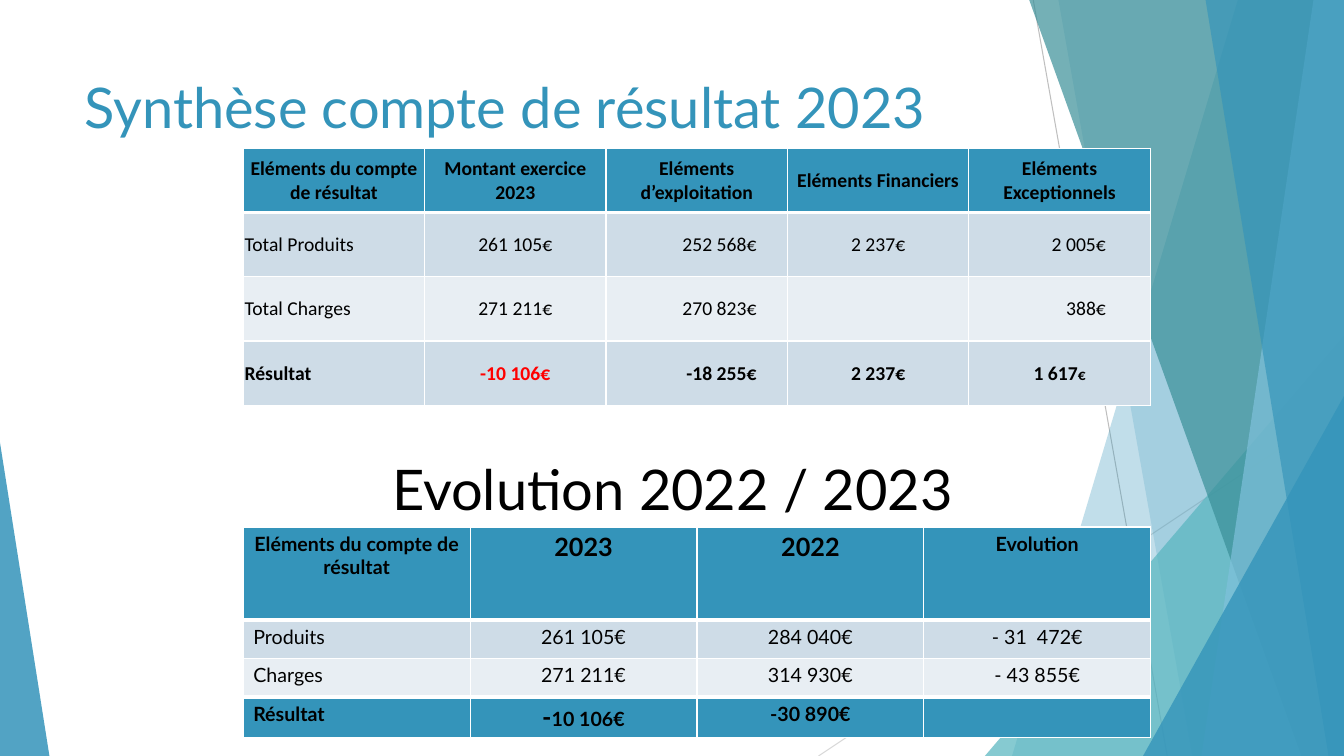
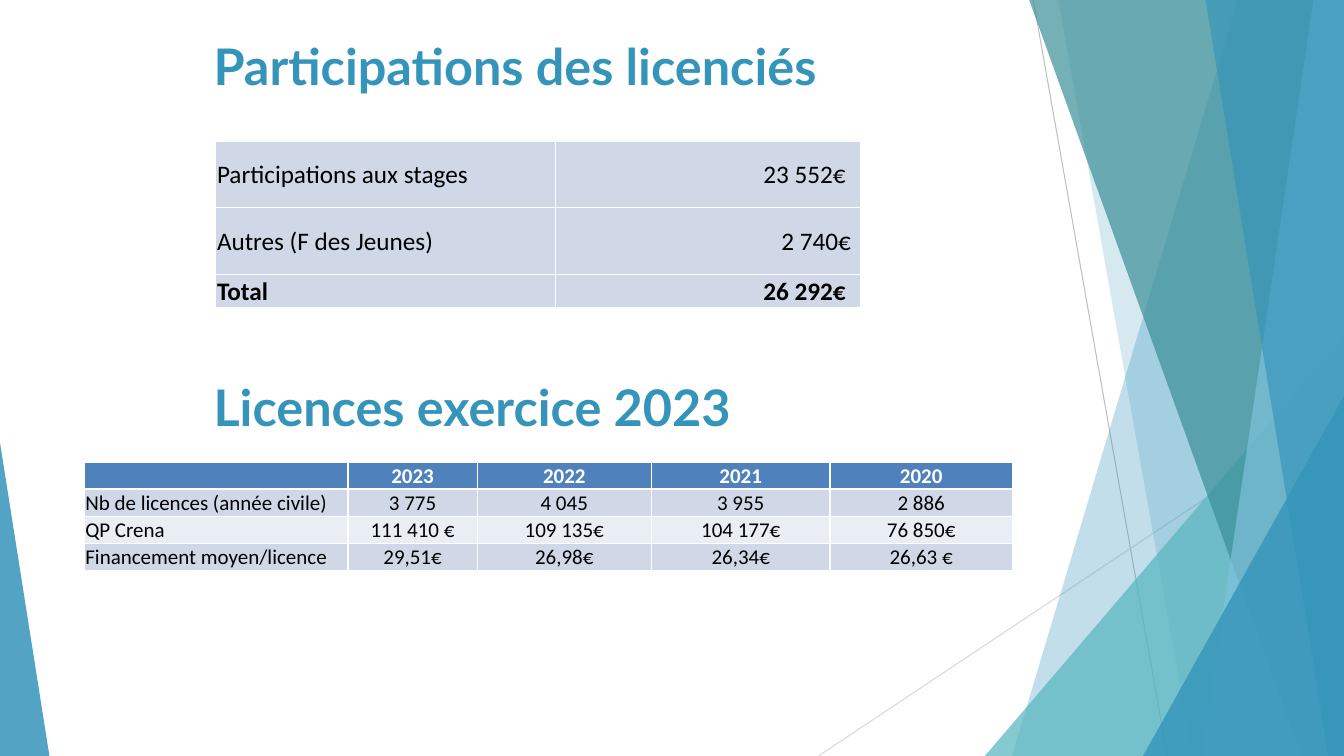
from lxml.etree import SubElement
from pptx import Presentation
from pptx.dml.color import RGBColor
from pptx.enum.shapes import MSO_CONNECTOR, MSO_SHAPE
from pptx.enum.text import MSO_ANCHOR, PP_ALIGN
from pptx.oxml.ns import qn
from pptx.util import Inches, Pt

COLORS = {
    "blue": "3494BA",
    "turquoise": "58B6C0",
    "teal": "3A8F98",
    "sky": "7FC1DB",
    "pale": "CEDCE7",
    "paler": "E8EEF3",
    "royal": "4F81BD",
    "lavender": "D0D8E8",
    "mist": "E9EDF4",
    "gray": "BFBFBF",
    "silver": "D9D9D9",
    "black": "000000",
    "white": "FFFFFF",
    "red": "FF0000",
}
COLORS_RGB = {name: RGBColor.from_string(value) for name, value in COLORS.items()}
LEFT, CENTER, RIGHT = PP_ALIGN.LEFT, PP_ALIGN.CENTER, PP_ALIGN.RIGHT
TIGHT = (0.1, 0.1, 0.1, 0)
ROOMY = (0.75, 0.67, 0.75, 0.67)

deck = Presentation()
deck.slide_width, deck.slide_height = Inches(13.33), Inches(7.5)
COLUMN, ROW = deck.slide_width / 100, deck.slide_height / 100


def add_heading(page, left, top, width, height, text, size, color="blue", bold=False, align=LEFT):
    box = page.shapes.add_textbox(
        round(left * COLUMN), round(top * ROW), round(width * COLUMN), round(height * ROW)
    )
    box.text_frame.word_wrap = True
    para = box.text_frame.paragraphs[0]
    para.text = text
    para.alignment = align
    para.font.name = "Lato"
    para.font.size = Pt(size)
    para.font.bold = bold
    para.font.color.rgb = COLORS_RGB[color]


def add_grid(page, left, top, columns, rows, font, size, padding, anchor, rules):
    width = sum(column[0] for column in columns)
    height = sum(row[0] for row in rows)
    table = page.shapes.add_table(
        len(rows), len(columns),
        round(left * COLUMN), round(top * ROW), round(width * COLUMN), round(height * ROW),
    ).table
    table.first_row = table.horz_banding = False
    for index, column in enumerate(columns):
        table.columns[index].width = round(column[0] * COLUMN)
    for row_index, (row_height, fill, ink, bold, entries) in enumerate(rows):
        table.rows[row_index].height = round(row_height * ROW)
        heading = row_index == 0 and bold
        for column_index, entry in enumerate(entries):
            align, right_padding = columns[column_index][1:]
            cell = table.cell(row_index, column_index)
            cell.vertical_anchor = anchor
            cell.margin_left = round(padding[0] * COLUMN)
            cell.margin_top = round(padding[1] * ROW)
            cell.margin_right = round((padding[2] if heading else right_padding) * COLUMN)
            cell.margin_bottom = round(padding[3] * ROW)

            properties = cell._tc.get_or_add_tcPr()
            widths = {"L": 1, "R": 1, "T": rules.get(row_index, 1), "B": rules.get(row_index + 1, 1)}
            for side, points in widths.items():
                border = SubElement(properties, qn(f"a:ln{side}"), w=str(Pt(points)))
                paint = SubElement(border, qn("a:solidFill"))
                SubElement(paint, qn("a:srgbClr"), val=COLORS["white"])
            cell.fill.solid()
            cell.fill.fore_color.rgb = COLORS_RGB[fill]

            para = cell.text_frame.paragraphs[0]
            para.alignment = CENTER if heading else align
            para.font.name = font
            para.font.size = Pt(size)
            para.font.bold = bold
            para.font.color.rgb = COLORS_RGB[ink]
            if isinstance(entry, str):
                para.text = entry
            else:
                for text, span_size in entry:
                    span = para.add_run()
                    span.text = text
                    span.font.size = Pt(span_size)
    return table


rays = [
    (76.88, 0, 86.85, 100, "gray"),
    (100, 53.73, 60.9, 100, "silver"),
]
facets = [
    ("band", (92.1, 75.3), "blue", 30),
    ("band", (78.75, 88.73), "blue", 20),
    ("triangle", (73.28, 100, 44.4, 1), "turquoise", 72),
    ("band", (76.58, 96.83), "teal", 70),
    ("band", (97.73, 89.4), "sky", 70),
    ("band", (89.7, 98.85), "blue", 65),
    ("triangle", (85.05, 100, 52.4, 1), "blue", 80),
    ("triangle", (0, 3.68, 58.53, 0), "blue", 85),
]

pages = [deck.slides.add_slide(deck.slide_layouts[6]) for _ in range(2)]
for page in pages:
    for start_x, start_y, end_x, end_y, color in rays:
        ray = page.shapes.add_connector(
            MSO_CONNECTOR.STRAIGHT,
            round(start_x * COLUMN), round(start_y * ROW), round(end_x * COLUMN), round(end_y * ROW),
        )
        ray.line.color.rgb = COLORS_RGB[color]
        ray.line.width = Pt(0.75)
        SubElement(ray.element.spPr, qn("a:effectLst"))
    for kind, geometry, color, opacity in facets:
        if kind == "band":
            top_x, bottom_x = geometry
            outline = page.shapes.build_freeform(round(top_x * COLUMN), 0)
            corners = [(100, 0), (100, 100), (bottom_x, 100)]
            outline.add_line_segments([(round(x * COLUMN), round(y * ROW)) for x, y in corners])
            facet = outline.convert_to_shape()
        else:
            left, right, top, apex = geometry
            facet = page.shapes.add_shape(
                MSO_SHAPE.ISOSCELES_TRIANGLE,
                round(left * COLUMN), round(top * ROW),
                round((right - left) * COLUMN), round((100 - top) * ROW),
            )
            facet.adjustments[0] = apex
        facet.shadow.inherit = False
        facet.line.fill.background()
        facet.fill.solid()
        facet.fill.fore_color.rgb = COLORS_RGB[color]
        tint = facet.element.xpath("./p:spPr/a:solidFill/a:srgbClr")[0]
        SubElement(tint, qn("a:alpha"), val=str(opacity * 1000))

results, members = pages

add_heading(results, 5.55, 8.93, 70.5, 19.2, "Synthèse compte de résultat 2023", 40)
summary = add_grid(
    results, 18.1, 19.6,
    [(13.5, LEFT, 0.1), (13.5, CENTER, 0.1), (13.5, RIGHT, 2.3), (13.5, CENTER, 0.1), (13.5, RIGHT, 3.3)],
    [
        (8.5, "blue", "black", True, [
            "Eléments du compte de résultat", "Montant exercice 2023", "Eléments d’exploitation",
            "Eléments Financiers", "Eléments Exceptionnels",
        ]),
        (8.5, "pale", "black", False, ["Total Produits", "261 105€", "252 568€", "2 237€", "2 005€"]),
        (8.5, "paler", "black", False, ["Total Charges", "271 211€", "270 823€", "", "388€"]),
        (8.5, "pale", "black", True, [
            "Résultat", "-10 106€", "-18 255€", "2 237€", [("1 617", 14), ("€", 11)],
        ]),
    ],
    "Calibri", 14, TIGHT, MSO_ANCHOR.MIDDLE, {1: 3},
)
summary.cell(3, 1).text_frame.paragraphs[0].font.color.rgb = COLORS_RGB["red"]
exceptional = summary.cell(3, 4)
exceptional.margin_right = exceptional.margin_left
exceptional.text_frame.paragraphs[0].alignment = CENTER

add_heading(results, 16.35, 59.5, 67.35, 10.3, "Evolution 2022 / 2023", 40, "black", align=CENTER)
add_grid(
    results, 18.1, 69.7,
    [(16.88, LEFT, 0.75)] + [(16.88, CENTER, 0.75)] * 3,
    [
        (12.3, "blue", "black", True, [
            "Eléments du compte de résultat", [("2023", 18)], [("2022", 18)], "Evolution",
        ]),
        (5.1, "pale", "black", False, ["Produits", "261 105€", "284 040€", "- 31  472€"]),
        (5.1, "paler", "black", False, ["Charges", "271 211€", "314 930€", "- 43 855€"]),
        (5.1, "blue", "black", True, ["Résultat", [("-", 18), ("10 106€", 14)], "-30 890€", ""]),
    ],
    "Lato", 14, ROOMY, MSO_ANCHOR.TOP, {1: 3, 3: 3},
)

add_heading(members, 15.15, 4, 67.35, 13.5, "Participations des licenciés", 36, bold=True)
participations = add_grid(
    members, 16.05, 18.7,
    [(25.28, LEFT, 0.1), (22.73, RIGHT, 1.13)],
    [
        (8.8, "lavender", "black", False, ["Participations aux stages", "23 552€"]),
        (8.8, "lavender", "black", False, ["Autres (F des Jeunes)", "2 740€"]),
        (4.4, "lavender", "black", True, ["Total", "26 292€"]),
    ],
    "Calibri", 18, TIGHT, MSO_ANCHOR.MIDDLE, {},
)
participations.cell(1, 1).margin_right = round(0.75 * COLUMN)

add_heading(members, 15.15, 49.1, 67.35, 9.5, "Licences exercice 2023", 36, bold=True)
add_grid(
    members, 6.25, 61.1,
    [(19.65, LEFT, 0.1)] + [(width, CENTER, 0.1) for width in (9.6, 12.98, 13.28, 13.58)],
    [
        (3.6, "royal", "white", True, ["", "2023", "2022", "2021", "2020"]),
        (3.6, "lavender", "black", False, [
            "Nb de licences (année civile)", "3 775", "4 045", "3 955", "2 886",
        ]),
        (3.6, "mist", "black", False, ["QP Crena", "111 410 €", "109 135€", "104 177€", "76 850€"]),
        (3.6, "lavender", "black", False, [
            "Financement moyen/licence", "29,51€", "26,98€", "26,34€", "26,63 €",
        ]),
    ],
    "Calibri", 15, TIGHT, MSO_ANCHOR.MIDDLE, {1: 1.5},
)

deck.save("out.pptx")
